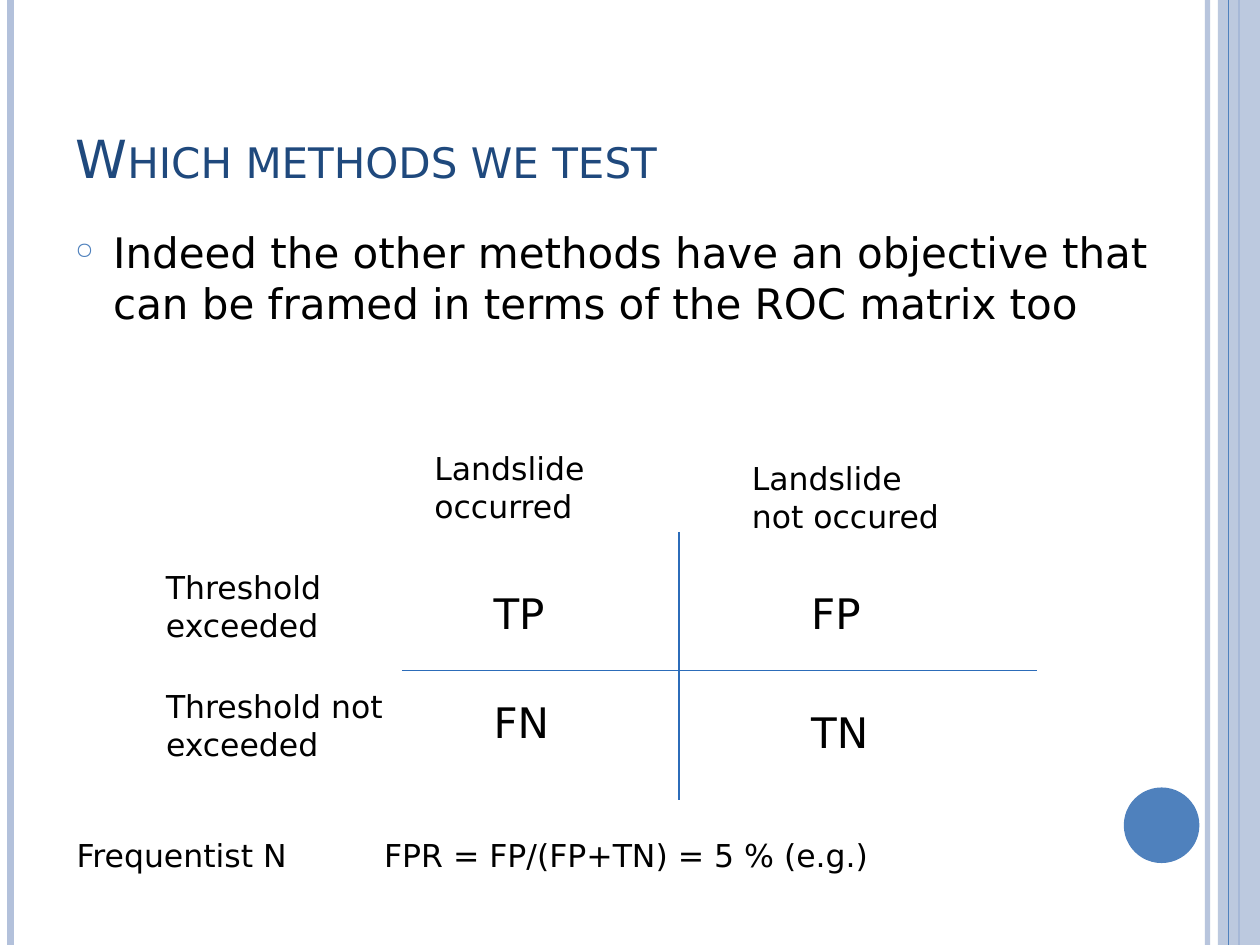
from lxml import etree
from pptx import Presentation
from pptx import util as u
from pptx.dml.color import RGBColor
from pptx.enum import shapes, text
from pptx.oxml.ns import qn

COLOURS = {"title": "1F497D", "text": "000000", "accent": "4F81BD",
           "frame": "B3C1DB", "matrix": "2C6CB9"}
WIDTH, HEIGHT = 720, 540


class SlideStyle:
    font = "DejaVu Sans"

    def __init__(self, slide):
        self.slide = slide

    def colour(self, name):
        return RGBColor.from_string(COLOURS[name])

    def set_alpha(self, fill_parent, percent):
        rgb = fill_parent.find(".//" + qn("a:srgbClr"))
        etree.SubElement(rgb, qn("a:alpha"), val=str(percent * 1000))

    def line(self, start, end, colour, weight, alpha=100):
        rule = self.slide.shapes.add_connector(
            shapes.MSO_CONNECTOR.STRAIGHT, *map(u.Pt, (*start, *end)))
        rule.line.color.rgb = self.colour(colour)
        rule.line.width = u.Pt(weight)
        properties = rule._element.spPr
        if alpha < 100:
            self.set_alpha(properties, alpha)
        etree.SubElement(properties, qn("a:effectLst"))

    def shape(self, kind, box, colour, alpha=100):
        block = self.slide.shapes.add_shape(kind, *map(u.Pt, box))
        block.shadow.inherit = False
        block.fill.solid()
        block.fill.fore_color.rgb = self.colour(colour)
        block.line.fill.background()
        if alpha < 100:
            self.set_alpha(block._element.spPr, alpha)

    def label(self, words, box, size=18, colour="text"):
        holder = self.slide.shapes.add_textbox(*map(u.Pt, box))
        frame = holder.text_frame
        frame.text = words
        frame.word_wrap = True
        font = frame.paragraphs[0].runs[0].font
        font.name, font.size = self.font, u.Pt(size)
        font.color.rgb = self.colour(colour)
        return frame

    def single_line(self, words, box, size=18):
        frame = self.label(words, box, size)
        frame.word_wrap = False

    def title(self, words, box):
        frame = self.label(words, box, 30, "title")
        frame.vertical_anchor = text.MSO_ANCHOR.BOTTOM
        frame.paragraphs[0].runs[0].font._element.set("cap", "small")

    def bullet(self, words, box):
        paragraph = self.label(words, box, 24).paragraphs[0]
        paragraph.space_before = u.Pt(6)
        properties = paragraph._p.get_or_add_pPr()
        indent = u.Pt(21.6)
        properties.set("marL", str(indent))
        properties.set("indent", str(-indent))
        bullet_colour = etree.SubElement(properties, qn("a:buClr"))
        etree.SubElement(bullet_colour, qn("a:srgbClr"), val=COLOURS["accent"])
        etree.SubElement(properties, qn("a:buSzPct"), val="55000")
        etree.SubElement(properties, qn("a:buChar"), char="○")


def main():
    deck = Presentation()
    deck.slide_width, deck.slide_height = u.Pt(WIDTH), u.Pt(HEIGHT)
    page = SlideStyle(deck.slides.add_slide(deck.slide_layouts[6]))

    # Side frame: stripes, right band and disc
    def stripe(x, colour, weight, alpha=100):
        page.line((x, 0), (x, HEIGHT), colour, weight, alpha)

    stripe(690, "frame", 3, 93)
    stripe(6, "frame", 4.5)
    stripe(708, "accent", 1.5)
    page.shape(shapes.MSO_SHAPE.RECTANGLE, (696, 0, 24, HEIGHT), "frame", 87)
    stripe(702, "accent", 0.75)
    page.shape(shapes.MSO_SHAPE.OVAL, (642.2, 450, 43.2, 43.2), "accent")

    # Title and statement
    page.title("Which methods we test", (36, 21.6, 588, 90))
    page.bullet("Indeed the other methods have an objective that can be framed "
                "in terms of the ROC matrix too", (36, 126, 647, 87))

    # False positive rate
    for words, left, width in (("Frequentist N", 36.7, 140),
                               ("FPR = FP/(FP+TN) = 5 % (e.g.)", 212.4, 310)):
        page.single_line(words, (left, 474, width, 29))

    # ROC matrix: cross, outcomes and headings
    page.line((229.7, 383.2), (592.6, 383.2), "matrix", 1)
    page.line((388.1, 304), (388.1, 457), "matrix", 1)
    for outcome, left, top in (("TP", 275, 332.4), ("FP", 456.5, 332.4),
                               ("FN", 275, 394.6), ("TN", 456.5, 400.3)):
        page.single_line(outcome, (left, top, 50, 36), 24)
    for heading, left, top, width in (
            ("Threshold exceeded", 87.8, 321.2, 133),
            ("Threshold not exceeded", 87.8, 389, 144.7),
            ("Landslide occurred", 241.2, 253, 133),
            ("Landslide not occured", 422.6, 258.7, 133)):
        page.label(heading, (left, top, width, 51))

    deck.save("out.pptx")


if __name__ == "__main__":
    main()
